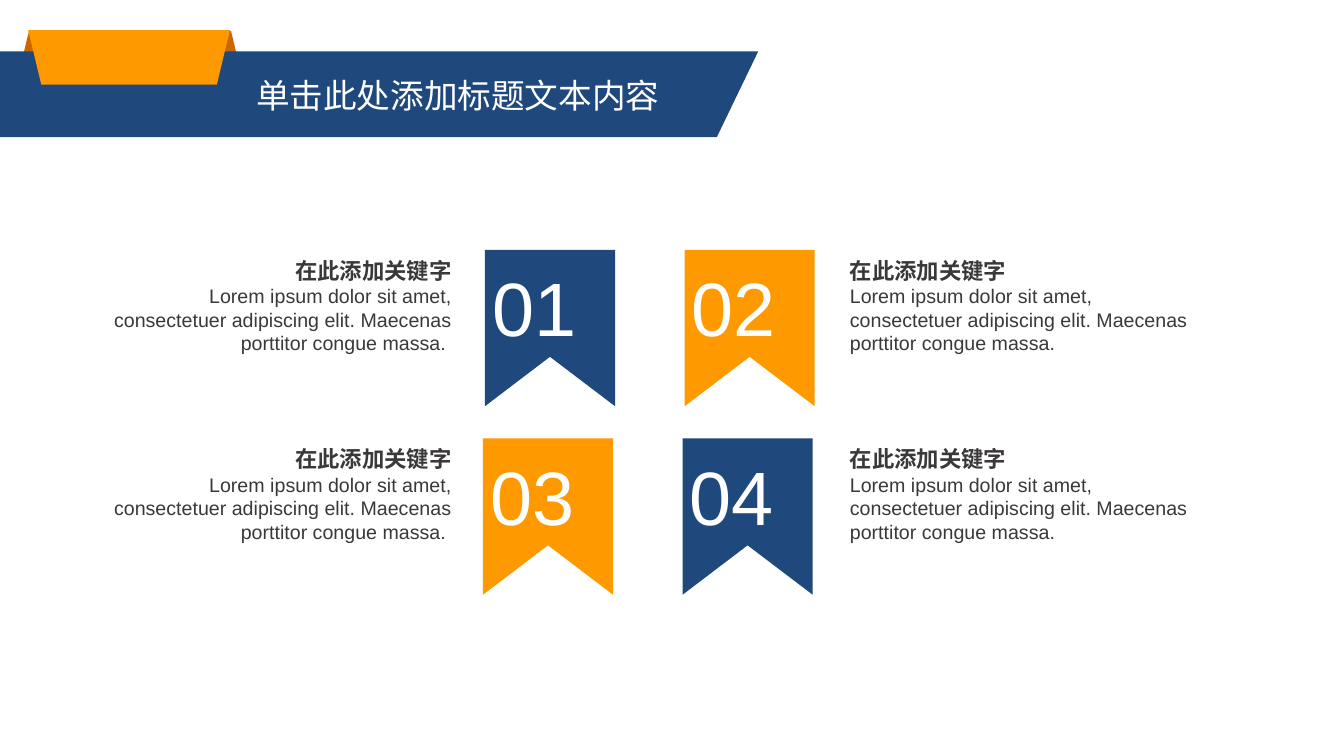
from pptx import Presentation
from pptx.dml.color import RGBColor
from pptx.enum.shapes import MSO_SHAPE
from pptx.enum.text import MSO_ANCHOR, PP_ALIGN
from pptx.util import Inches, Pt

NAVY, ORANGE, RUST = "1F487C", "FF9900", "CC6600"
WHITE, CHARCOAL = "FFFFFF", "3B3838"
HEADING = "在此添加关键字"
BODY = "Lorem ipsum dolor sit amet, consectetuer adipiscing elit. Maecenas porttitor congue massa."


def color(value):
    """Turn a hex string into a colour."""
    return RGBColor.from_string(value)


def write(para, text, size=14, tint=CHARCOAL, bold=False, align=PP_ALIGN.LEFT, font="Arial"):
    """Add formatted text to a paragraph."""
    para.alignment = align
    span = para.add_run()
    span.text = text
    span.font.name = font
    span.font.size = Pt(size)
    span.font.bold = bold
    span.font.color.rgb = color(tint)


def set_frame(frame, left=0.13, top=0.07, anchor=MSO_ANCHOR.TOP, wrap=True):
    """Set the insets, anchor and wrapping of a text frame."""
    frame.margin_left = frame.margin_right = Inches(left)
    frame.margin_top = frame.margin_bottom = Inches(top)
    frame.vertical_anchor = anchor
    frame.word_wrap = wrap


class RibbonPage:
    """Hold the current slide and draw its elements."""

    def __init__(self, deck):
        """Add a title-only slide to the deck."""
        self.page = deck.slides.add_slide(deck.slide_layouts[5])
        self.shapes = self.page.shapes

    def paint(self, shape, fill):
        """Give a shape a flat fill without line or shadow."""
        shape.shadow.inherit = False
        shape.fill.solid()
        shape.fill.fore_color.rgb = color(fill)
        shape.line.fill.background()
        return shape

    def trapezoid(self, left, top, width, height, fill, rotation=0):
        """Draw one layer of the folded tab."""
        shape = self.shapes.add_shape(
            MSO_SHAPE.TRAPEZOID, Inches(left), Inches(top), Inches(width), Inches(height))
        shape.adjustments[0] = 0.24
        shape.rotation = rotation
        self.paint(shape, fill)

    def outline(self, points, fill):
        """Draw a closed polygon through points in inches."""
        start, *rest = [(Inches(x), Inches(y)) for x, y in points]
        builder = self.shapes.build_freeform(*start)
        builder.add_line_segments(rest, close=True)
        return self.paint(builder.convert_to_shape(), fill)

    def title(self, text):
        """Place the title over the banner."""
        box = self.shapes.title
        box.left, box.top = Inches(2.41), Inches(0.67)
        box.width, box.height = Inches(4.31), Inches(0.54)
        set_frame(box.text_frame, anchor=MSO_ANCHOR.MIDDLE, wrap=False)
        write(box.text_frame.paragraphs[0], text, size=24, tint=WHITE)
        self.shapes.element.append(box.element)

    def ribbon(self, left, top, number, fill):
        """Draw a notched ribbon with its number."""
        right, bottom = left + 1.29, top + 1.55
        shape = self.outline(
            [(left, top), (right, top), (right, bottom),
             (left + 0.645, top + 1.06), (left, bottom)], fill)
        set_frame(shape.text_frame, left=0.07, top=0.11, wrap=False)
        write(shape.text_frame.paragraphs[0], number, size=54, tint=WHITE)

    def keyword(self, left, top, body, align):
        """Write a heading with its description."""
        box = self.shapes.add_textbox(Inches(left), Inches(top), Inches(3.63), Inches(1.11))
        frame = box.text_frame
        set_frame(frame)
        write(frame.paragraphs[0], HEADING, size=16, bold=True, align=align)
        write(frame.add_paragraph(), body, align=align)


def main():
    """Build and save the slide."""
    deck = Presentation()
    deck.slide_width, deck.slide_height = Inches(13.33), Inches(7.5)
    page = RibbonPage(deck)
    page.trapezoid(0.16, 0.31, 2.26, 0.53, RUST)
    page.outline([(0, 0.51), (7.52, 0.51), (7.11, 1.36), (0, 1.36)], NAVY)
    page.trapezoid(0.28, 0.3, 2, 0.54, ORANGE, rotation=180)
    page.title("单击此处添加标题文本内容")
    columns = [(0.98, BODY + " ", PP_ALIGN.RIGHT), (8.3, BODY, PP_ALIGN.LEFT)]
    for row in range(2):
        top = 2.48 + 1.87 * row
        for column, (left, body, align) in enumerate(columns):
            fill = NAVY if row == column else ORANGE
            number = f"{2 * row + column + 1:02d}"
            page.ribbon(4.81 + 1.98 * column - 0.02 * row, top, number, fill)
            page.keyword(left, top, body, align)
    deck.save("out.pptx")


if __name__ == "__main__":
    main()
